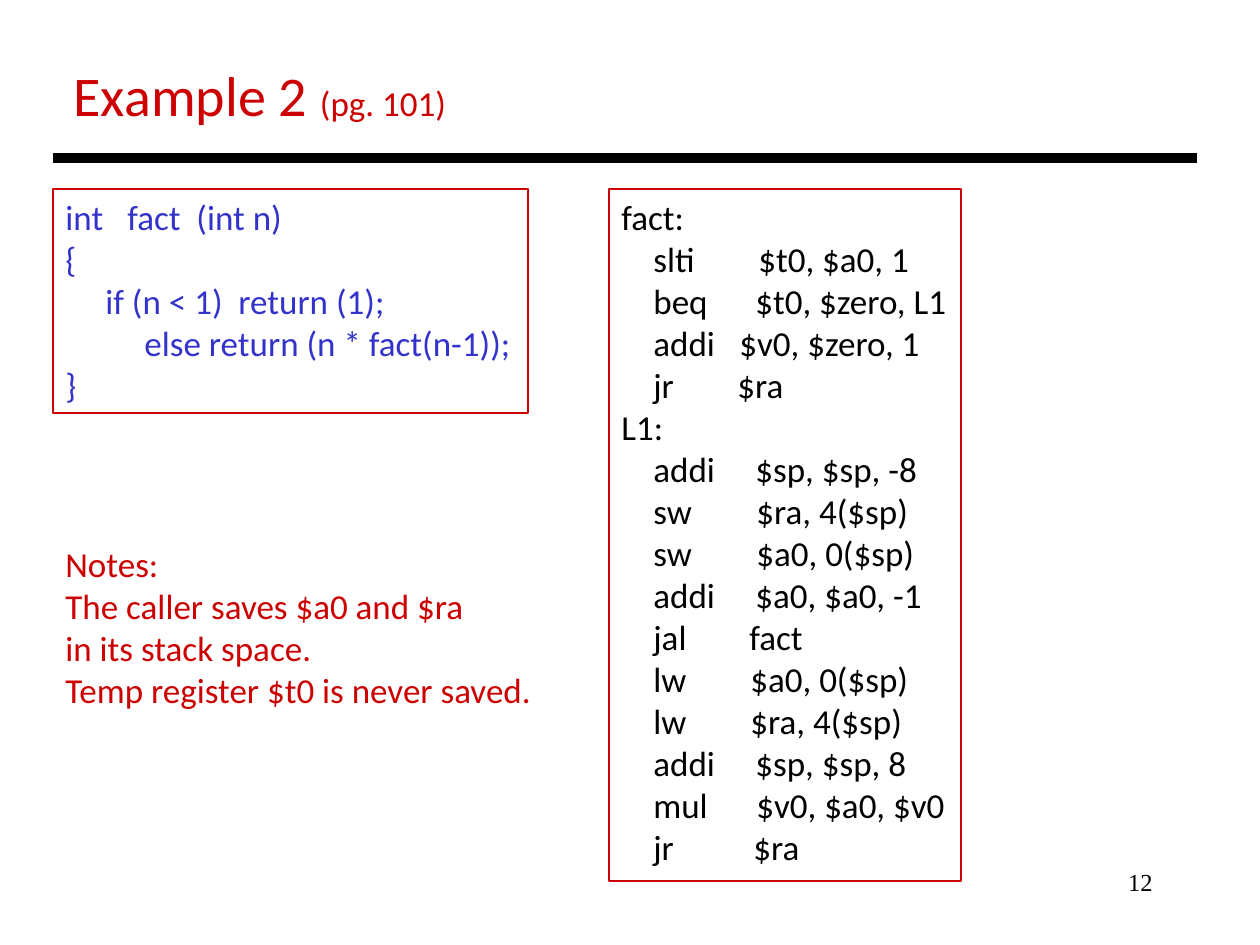
"""Build the recursive factorial slide: C source, MIPS assembly and notes."""
import pptx
import pptx.dml.color
import pptx.enum.shapes
import pptx.enum.text
import pptx.oxml.ns
import pptx.util
from lxml import etree

COLORS = {"red": "CC0000", "blue": "3333CC", "black": "000000"}
INDENT = 32


def px(n):
    return pptx.util.Emu(round(n * 914400 / 126))


def add_run(p, text, size, color, font="Calibri"):
    r = p.add_run()
    r.text = text
    r.font.size = pptx.util.Pt(size)
    r.font.name = font
    r.font.color.rgb = pptx.dml.color.RGBColor.from_string(COLORS[color])


prs = pptx.Presentation()
prs.slide_width, prs.slide_height = px(1260), px(945)
s = prs.slides.add_slide(prs.slide_layouts[5])

title = s.shapes.title
title.left, title.top, title.width, title.height = px(61), px(54), px(402), px(81)
tf = title.text_frame
tf.auto_size = pptx.enum.text.MSO_AUTO_SIZE.NONE
tf.vertical_anchor = pptx.enum.text.MSO_ANCHOR.TOP
p = tf.paragraphs[0]
p.alignment = pptx.enum.text.PP_ALIGN.LEFT
add_run(p, "Example 2 ", 32, "red")
add_run(p, "(pg. 101)", 20, "red")

rule = s.shapes.add_connector(
    pptx.enum.shapes.MSO_CONNECTOR.STRAIGHT, px(53), px(158), px(1197), px(158))
rule.line.width = pptx.util.Pt(6)
rule.line.color.rgb = pptx.dml.color.RGBColor.from_string(COLORS["black"])
etree.SubElement(rule.element.spPr, pptx.oxml.ns.qn("a:effectLst"))

c_source = [
    ("int\tfact\t(int n)", [62, 131]),
    ("{", []),
    ("\tif (n < 1)\treturn (1);", [40, 173]),
    ("\telse return (n * fact(n-1));", [79]),
    ("}", []),
]
instructions = [
    ("fact:", None, None),
    ("slti", "$t0, $a0, 1", 137),
    ("beq", "$t0, $zero, L1", 134),
    ("addi", "$v0, $zero, 1", 118),
    ("jr", "$ra", 116),
    ("L1:", None, None),
    ("addi", "$sp, $sp, -8", 134),
    ("sw", "$ra, 4($sp)", 135),
    ("sw", "$a0, 0($sp)", 135),
    ("addi", "$a0, $a0, -1", 134),
    ("jal", "fact", 128),
    ("lw", "$a0, 0($sp)", 129),
    ("lw", "$ra, 4($sp)", 129),
    ("addi", "$sp, $sp, 8", 134),
    ("mul", "$v0, $a0, $v0", 135),
    ("jr", "$ra", 132),
]
assembly = [(f"\t{op}\t{args}", [INDENT, column]) if args else (op, [])
            for op, args, column in instructions]
notes = [(line, []) for line in (
    "Notes:",
    "The caller saves $a0 and $ra",
    "in its stack space.",
    "Temp register $t0 is never saved.",
)]

blocks = [
    (53, 189, 475, 224, "blue", True, c_source),
    (609, 189, 352, 692, "black", True, assembly),
    (53, 536, 495, 183, "red", False, notes),
]
for left, top, width, height, color, framed, lines in blocks:
    box = (px(left), px(top), px(width), px(height))
    if framed:
        sp = s.shapes.add_shape(pptx.enum.shapes.MSO_SHAPE.RECTANGLE, *box)
        sp.shadow.inherit = False
        sp.fill.background()
        sp.line.width = pptx.util.Pt(0.75)
        sp.line.color.rgb = pptx.dml.color.RGBColor.from_string(COLORS["red"])
    else:
        sp = s.shapes.add_textbox(*box)
    tf = sp.text_frame
    tf.word_wrap = True
    tf.vertical_anchor = pptx.enum.text.MSO_ANCHOR.TOP
    for i, (text, stops) in enumerate(lines):
        p = tf.add_paragraph() if i else tf.paragraphs[0]
        p.alignment = pptx.enum.text.PP_ALIGN.LEFT
        if stops:
            tabs = etree.SubElement(p._p.get_or_add_pPr(), pptx.oxml.ns.qn("a:tabLst"))
            for stop in stops:
                etree.SubElement(tabs, pptx.oxml.ns.qn("a:tab"), pos=str(px(stop)), algn="l")
        add_run(p, text, 20, color)

number = s.shapes.add_textbox(px(903), px(861), px(262), px(63))
number.text_frame.word_wrap = True
p = number.text_frame.paragraphs[0]
p.alignment = pptx.enum.text.PP_ALIGN.RIGHT
add_run(p, "12", 14, "black", "Times New Roman")

prs.save("out.pptx")
